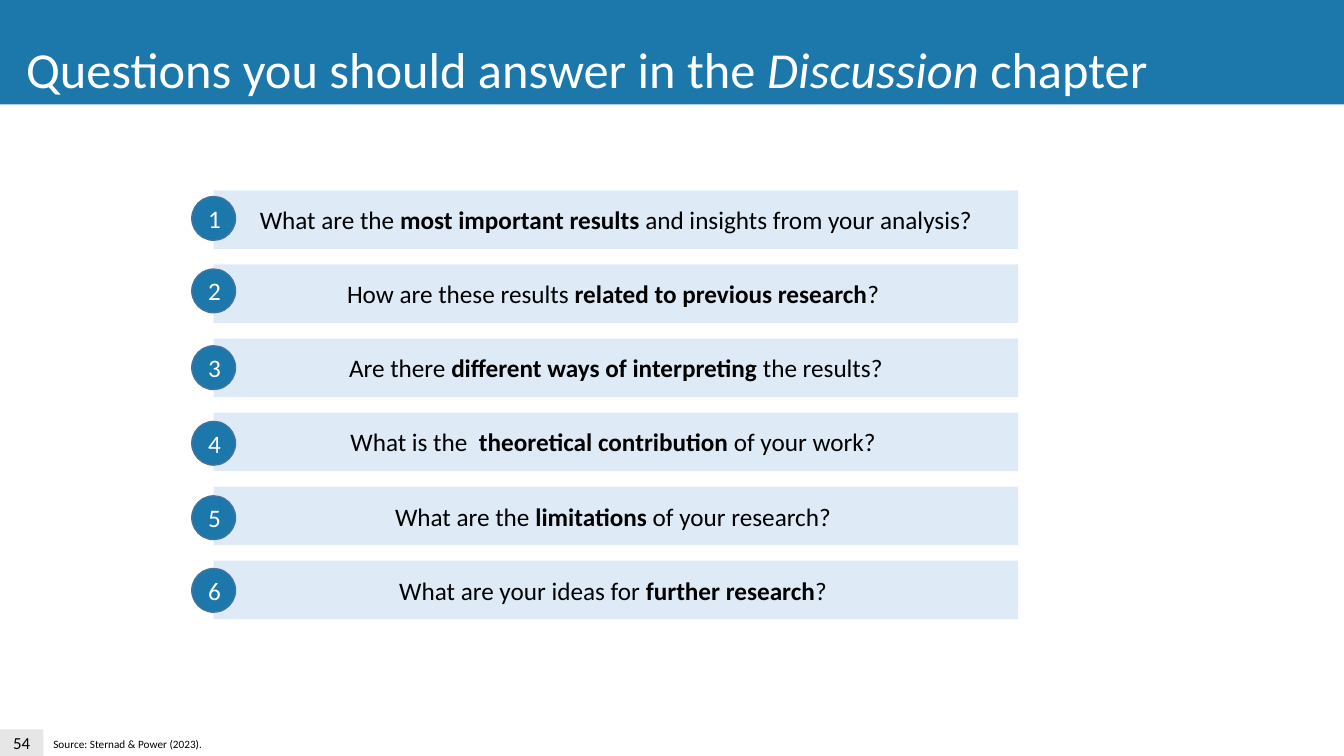
from pptx import Presentation
from pptx.dml.color import RGBColor
from pptx.enum.shapes import MSO_SHAPE
from pptx.enum.text import MSO_ANCHOR, MSO_AUTO_SIZE, PP_ALIGN
from pptx.util import Pt

RECT, OVAL = MSO_SHAPE.RECTANGLE, MSO_SHAPE.OVAL
MIDDLE, CENTER = MSO_ANCHOR.MIDDLE, PP_ALIGN.CENTER
GROW = MSO_AUTO_SIZE.SHAPE_TO_FIT_TEXT

COLORS = {
    "blue": "1C78AB",
    "edge": "43739E",
    "pale": "DEEBF7",
    "gray": "E7E6E6",
    "black": "000000",
    "white": "FFFFFF",
}

# Top of the number badge, then plain, bold and plain text
QUESTIONS = [
    (140.4, "What are the ", "most important results ", "and insights from your analysis?"),
    (192.2, "How are these results ", "related to previous research", "? "),
    (247, "Are there ", "different ways of interpreting ", "the results?"),
    (301, "What is the  ", "theoretical contribution ", "of your work? "),
    (354.2, "What are the ", "limitations", " of your research? "),
    (406.1, "What are your ideas for ", "further research", "? "),
]
BAR_LEFT, BAR_TOP, BAR_STEP = 152.6, 136, 52.9
BAR_WIDTH, BAR_HEIGHT = 574.6, 41.8
BADGE = 31.2


class Painter:
    def __init__(self, slide, font):
        self.slide = slide
        self.font = font

    def color(self, name):
        return RGBColor.from_string(COLORS[name])

    def fill_text(self, frame, runs, size, color, bold=False, italic=False):
        """Fill the frame with one paragraph; bold or italic marks the second run."""
        para = frame.paragraphs[0]
        para.font.name = self.font
        para.font.size = Pt(size)
        para.font.color.rgb = self.color(color)
        for index, text in enumerate(runs):
            run = para.add_run()
            run.text = text
            if index == 1:
                run.font.bold = bold
                run.font.italic = italic
        return para

    def shape(self, kind, box, fill, line=None):
        item = self.slide.shapes.add_shape(kind, *map(Pt, box))
        item.shadow.inherit = False
        item.fill.solid()
        item.fill.fore_color.rgb = self.color(fill)
        if line:
            item.line.color.rgb = self.color(line)
            item.line.width = Pt(1)
        else:
            item.line.fill.background()
        return item

    def label(self, item, runs, size, color="black"):
        """Centre text inside a shape."""
        frame = item.text_frame
        frame.vertical_anchor = MIDDLE
        self.fill_text(frame, runs, size, color, bold=True).alignment = CENTER

    def text(self, box, runs, size, color):
        frame = self.slide.shapes.add_textbox(*map(Pt, box)).text_frame
        frame.word_wrap = False
        frame.auto_size = GROW
        self.fill_text(frame, runs, size, color, italic=True)


def main():
    deck = Presentation()
    deck.slide_width, deck.slide_height = Pt(960), Pt(540)
    paint = Painter(deck.slides.add_slide(deck.slide_layouts[6]), "Calibri")

    page = paint.shape(RECT, (0, 521, 31, 19), "gray")
    paint.label(page, ["54"], 12)
    paint.shape(RECT, (0, -0.7, 960.5, 75.4), "blue")
    title = ["Questions you should answer in the ", "Discussion ", "chapter"]
    paint.text((11.5, 23.8, 843, 51), title, 36, "white")
    paint.text((31, 522.8, 121.7, 17), ["Source: Sternad & Power (2023)."], 8, "black")

    for row, (_, *runs) in enumerate(QUESTIONS):
        top = BAR_TOP + row * BAR_STEP
        bar = paint.shape(RECT, (BAR_LEFT, top, BAR_WIDTH, BAR_HEIGHT), "pale")
        paint.label(bar, runs, 18)

    for number, (top, *_) in enumerate(QUESTIONS, 1):
        box = (BAR_LEFT - BADGE / 2, top, BADGE, BADGE)
        badge = paint.shape(OVAL, box, "blue", "edge")
        paint.label(badge, [str(number)], 18, "white")

    deck.save("out.pptx")


if __name__ == "__main__":
    main()
